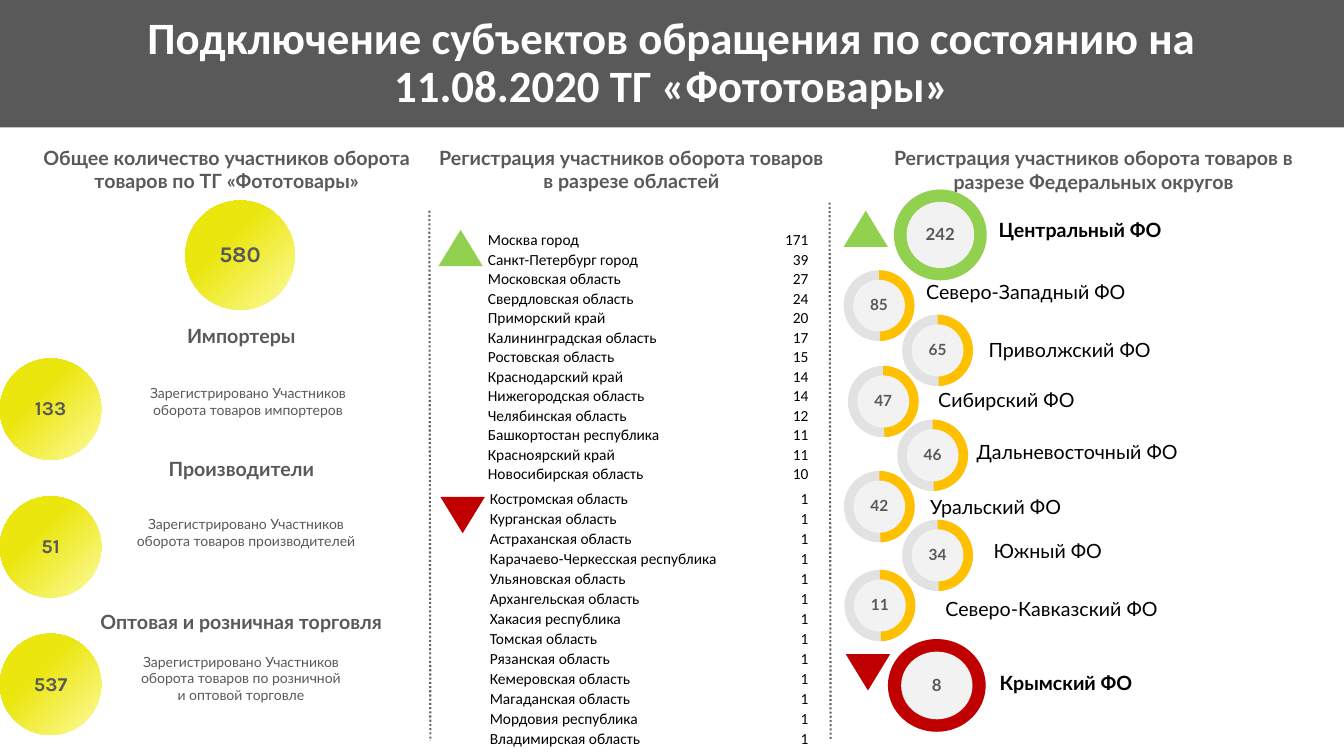
import pptx
import pptx.util
import pptx.dml.color
import pptx.enum.dml
import pptx.enum.shapes
import pptx.enum.text
import pptx.oxml.ns
import lxml.etree

Pt = pptx.util.Pt
RGBColor = pptx.dml.color.RGBColor
SHAPE = pptx.enum.shapes.MSO_SHAPE
ALIGN = pptx.enum.text.PP_ALIGN
ANCHOR = pptx.enum.text.MSO_ANCHOR

GRAY = RGBColor(0x59, 0x59, 0x59)
DIVIDER_GRAY = RGBColor(0x66, 0x66, 0x66)
WHITE = RGBColor(0xFF, 0xFF, 0xFF)
BLACK = RGBColor(0, 0, 0)
PALE_YELLOW = RGBColor(0xFD, 0xFB, 0x9F)
YELLOW = RGBColor(0xEB, 0xE6, 0x0E)
RING_GRAY = RGBColor(0xE2, 0xE2, 0xE3)
CORE_GRAY = RGBColor(0xF2, 0xF2, 0xF2)
GREEN = RGBColor(0x92, 0xD0, 0x50)
RED = RGBColor(0xC0, 0, 0)
AMBER = RGBColor(0xFF, 0xC0, 0)

deck = pptx.Presentation()
deck.slide_width = Pt(960)
deck.slide_height = Pt(540)
slide = deck.slides.add_slide(deck.slide_layouts[6])
shapes = slide.shapes


def write(frame, text, margins, font, align=ALIGN.CENTER, anchor=ANCHOR.MIDDLE, wrap=True, spacing=None):
    frame.word_wrap = wrap
    frame.vertical_anchor = anchor
    for side, margin in zip(("left", "top", "right", "bottom"), margins):
        setattr(frame, f"margin_{side}", Pt(margin))
    para = frame.paragraphs[0]
    para.alignment = align
    para.line_spacing = spacing
    span = para.add_run()
    span.text = text
    values = {"name": "Lato", "size": Pt(14), "bold": True} | font
    span.font.color.rgb = values.pop("color", GRAY)
    for name, value in values.items():
        setattr(span.font, name, value)


def draw(kind, left, top, width, height, color=None):
    shape = shapes.add_shape(kind, Pt(left), Pt(top), Pt(width), Pt(height))
    shape.shadow.inherit = False
    shape.line.fill.background()
    if color is not None:
        shape.fill.solid()
        shape.fill.fore_color.rgb = color
    return shape


draw(SHAPE.RECTANGLE, 0, 0, 960, 91, GRAY)
box = shapes.add_textbox(Pt(49.7), Pt(10.8), Pt(860.4), Pt(69.8))
write(box.text_frame, "Подключение субъектов обращения по состоянию на 11.08.2020 ТГ «Фототовары»",
      (0, 0, 0, 0), {"name": "Calibri", "size": Pt(32), "color": WHITE}, spacing=0.9)

for x_top, y_top, x_bottom in [(306.7, 150.5, 307.4), (592.6, 144.7, 593.3)]:
    divider = shapes.add_connector(pptx.enum.shapes.MSO_CONNECTOR.STRAIGHT,
                                   Pt(x_top), Pt(y_top), Pt(x_bottom), Pt(529.2))
    divider.line.color.rgb = DIVIDER_GRAY
    divider.line.width = Pt(1.5)
    divider.line.dash_style = pptx.enum.dml.MSO_LINE.ROUND_DOT
    properties = divider._element.spPr
    lxml.etree.SubElement(properties, pptx.oxml.ns.qn("a:effectLst"))

column_headings = [
    ("Общее количество участников оборота товаров по ТГ «Фототовары»", -1.4, 103, 319.7),
    ("Регистрация участников оборота товаров в разрезе областей", 302.4, 103, 290.2),
    ("Регистрация участников оборота товаров в разрезе Федеральных округов", 617.8, 103.7, 319.7),
]
for text, left, top, width in column_headings:
    box = shapes.add_textbox(Pt(left), Pt(top), Pt(width), Pt(35.3))
    write(box.text_frame, text, (7.2, 3.6, 0, 3.6), {})

totals = [("580", 132.5, 143.3, 78, 16), ("133", 0, 256.1, 72.3, 14),
          ("51", 0, 354.5, 72.3, 14), ("537", 0, 452.7, 72.3, 14)]
for value, left, top, diameter, size in totals:
    circle = draw(SHAPE.OVAL, left, top, diameter, diameter)
    circle.fill.gradient()
    circle.fill.gradient_angle = 135
    for stop, color, position in zip(circle.fill.gradient_stops, (PALE_YELLOW, YELLOW), (0, 0.63)):
        stop.color.rgb = color
        stop.position = position
    write(circle.text_frame, value, (7.2,) * 4, {"name": "Karla", "size": Pt(size)}, wrap=False, spacing=0.95)

categories = [
    ("Импортеры", 231.1, "Зарегистрировано Участников оборота товаров импортеров", 98.6, 273.2, 149.8),
    ("Производители", 325.6, "Зарегистрировано Участников оборота товаров производителей", 88.6, 367, 167),
    ("Оптовая и розничная торговля", 435, "Зарегистрировано Участников оборота товаров по розничной и оптовой торговле",
     93.6, 471.2, 149.8),
]
for heading, heading_top, note, left, top, width in categories:
    box = shapes.add_textbox(Pt(64), Pt(heading_top), Pt(216.7), Pt(17.3))
    write(box.text_frame, heading, (0, 0, 0, 0), {}, anchor=ANCHOR.BOTTOM)
    box = shapes.add_textbox(Pt(left), Pt(top), Pt(width), Pt(26.6))
    write(box.text_frame, note, (7.2, 3.6, 0, 3.6), {"size": Pt(10), "bold": False})

HALF, FULL = 52.8, 161.8
districts = [
    ("Крымский ФО", "8", 634.3, 456.5, 69.8, 66.2, RED, 707, 475.9),
    ("Северо-Западный ФО", "85", 602.6, 193, 50.6, 50.6, AMBER, 654.5, 196.6),
    ("Центральный ФО", "242", 638.6, 135.4, 66.2, 64.8, GREEN, 706.3, 151.9),
    ("Приволжский ФО", "65", 644.4, 224.8, 50.6, 51, AMBER, 699.1, 237.6),
    ("Сибирский ФО", "47", 605.6, 261.3, 50.6, 51, AMBER, 663.1, 273.6),
    ("Дальневосточный ФО", "46", 640.9, 299.7, 50.6, 51, AMBER, 690.5, 311),
    ("Уральский ФО", "42", 602.8, 336.4, 50.6, 51, AMBER, 657.4, 349.9),
    ("Южный ФО", "34", 644.4, 371.2, 50.6, 51, AMBER, 702.7, 381.6),
    ("Северо-Кавказский ФО", "11", 603.2, 407, 50.6, 51, AMBER, 668.2, 422.6),
]
for name, value, left, top, width, height, color, label_left, label_top in districts:
    extreme = color != AMBER
    draw(SHAPE.OVAL, left, top, width, height, RING_GRAY)
    arc = draw(SHAPE.ARC, left, top, width, height, color)
    arc.adjustments[0] = 162
    arc.adjustments[1] = FULL if extreme else HALF
    core = draw(SHAPE.OVAL, left + width * 0.135, top + height * 0.135, width * 0.73, height * 0.73, CORE_GRAY)
    write(core.text_frame, value, (7.2,) * 4, {"size": Pt(12 if extreme else 11)}, wrap=False, spacing=0.95)
    box = shapes.add_textbox(Pt(label_left), Pt(label_top), Pt(180), Pt(24.5))
    write(box.text_frame, name, (7.2, 3.6, 7.2, 3.6), {"bold": extreme, "color": BLACK},
          align=ALIGN.LEFT, anchor=ANCHOR.TOP)

markers = [(602.6, 150.5, 0, GREEN), (313.2, 164.2, 0, GREEN),
           (314.6, 355, 180, RED), (604.1, 467.3, 180, RED)]
for left, top, rotation, color in markers:
    marker = draw(SHAPE.ISOSCELES_TRIANGLE, left, top, 31.7, 25.9, color)
    marker.rotation = rotation

leaders = [
    ("Москва город", 171), ("Санкт-Петербург город", 39), ("Московская область", 27),
    ("Свердловская область", 24), ("Приморский край", 20), ("Калининградская область", 17),
    ("Ростовская область", 15), ("Краснодарский край", 14), ("Нижегородская область", 14),
    ("Челябинская область", 12), ("Башкортостан республика", 11), ("Красноярский край", 11),
    ("Новосибирская область", 10),
]
outsiders = [(region, 1) for region in (
    "Костромская область", "Курганская область", "Астраханская область",
    "Карачаево-Черкесская республика", "Ульяновская область", "Архангельская область",
    "Хакасия республика", "Томская область", "Рязанская область", "Кемеровская область",
    "Магаданская область", "Мордовия республика", "Владимирская область")]
region_tables = [(outsiders, 349.2, 349.2, (175, 54), 14.3), (leaders, 347.8, 164.2, (192.2, 38.2), 13.96)]
for regions, left, top, widths, row_height in region_tables:
    table = shapes.add_table(len(regions), 2, Pt(left), Pt(top), Pt(sum(widths)),
                             Pt(row_height * len(regions))).table
    table.first_row = False
    table.horz_banding = False
    for column, width in zip(table.columns, widths):
        column.width = Pt(width)
    for row, entry in zip(table.rows, regions):
        row.height = Pt(row_height)
        for cell, value, align in zip(row.cells, entry, (ALIGN.LEFT, ALIGN.RIGHT)):
            cell.fill.background()
            cell.vertical_anchor = ANCHOR.BOTTOM
            for side, margin in {"left": 0.7, "top": 0.7, "right": 0.7, "bottom": 0}.items():
                setattr(cell, f"margin_{side}", Pt(margin))
            para = cell.text_frame.paragraphs[0]
            para.alignment = align
            span = para.add_run()
            span.text = str(value)
            span.font.color.rgb = BLACK
            for name, setting in {"name": "Calibri", "size": Pt(11), "bold": False}.items():
                setattr(span.font, name, setting)

deck.save("out.pptx")
